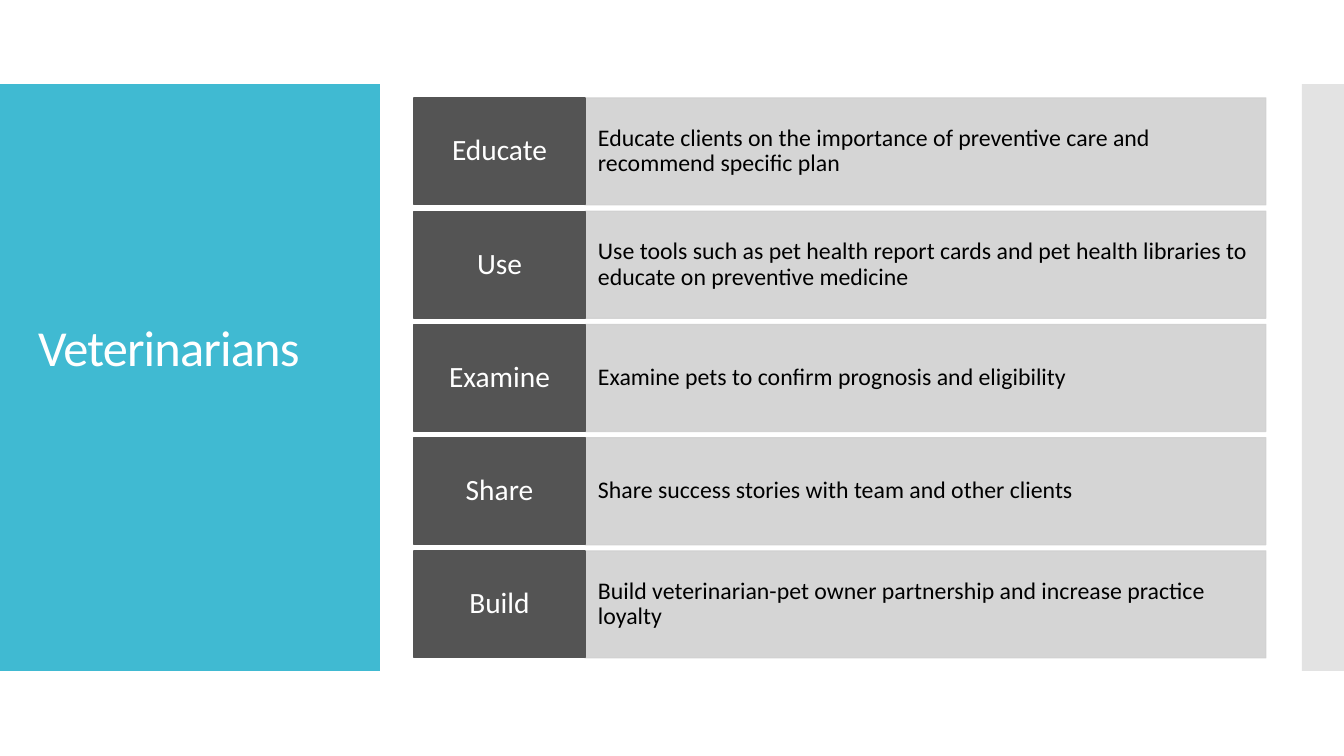
from lxml.etree import SubElement
from pptx import Presentation
from pptx.dml.color import RGBColor
from pptx.enum.shapes import MSO_SHAPE
from pptx.enum.text import MSO_ANCHOR, PP_ALIGN
from pptx.oxml.ns import qn
from pptx.util import Pt

PX = 914400 / 100.8  # EMU in one px

TEAL = RGBColor(0x40, 0xBA, 0xD2)
EDGE_GRAY = RGBColor(0xC8, 0xC8, 0xC8)
LIGHT_GRAY = RGBColor(0xD1, 0xD1, 0xD1)
DARK_GRAY = RGBColor(0x54, 0x54, 0x54)
WHITE = RGBColor(0xFF, 0xFF, 0xFF)
BLACK = RGBColor(0x00, 0x00, 0x00)

ACTIONS = [
    ("Educate", "Educate clients on the importance of preventive care and "
                "recommend specific plan"),
    ("Use", "Use tools such as pet health report cards and pet health "
            "libraries to educate on preventive medicine"),
    ("Examine", "Examine pets to confirm prognosis and eligibility"),
    ("Share", "Share success stories with team and other clients"),
    ("Build", "Build veterinarian-pet owner partnership and increase "
              "practice loyalty"),
]


def px(length):
    return round(length * PX)


def add_block(page, box, color, opacity=100, outlined=False):
    block = page.shapes.add_shape(MSO_SHAPE.RECTANGLE, *map(px, box))
    block.shadow.inherit = False
    paints = [block.fill]
    if outlined:
        block.line.width = Pt(0.85)
        paints.append(block.line.fill)
    else:
        block.line.fill.background()
    for paint in paints:
        paint.solid()
        paint.fore_color.rgb = color
    if opacity < 100:
        for tint in block._element.spPr.iter(qn("a:srgbClr")):
            SubElement(tint, qn("a:alpha"), val=str(opacity * 1000))
    return block


def write(shape, text, size, color, align, insets):
    frame = shape.text_frame
    frame.text = text
    frame.word_wrap = True
    frame.vertical_anchor = MSO_ANCHOR.MIDDLE
    (frame.margin_left, frame.margin_top,
     frame.margin_right, frame.margin_bottom) = map(px, insets)
    para = frame.paragraphs[0]
    para.alignment = align
    para.line_spacing = 0.9
    span = para.runs[0]
    span.font.name = "Calibri"
    span.font.size = Pt(size)
    span.font.color.rgb = color
    return span


def add_title_panel(page, box):
    left, top, width, height = box
    add_block(page, box, TEAL)
    title = page.shapes.add_textbox(
        px(left + 28), px(top + 40), px(width - 55), px(height - 80))
    # The deep bottom inset lifts the title above the middle
    span = write(title, "Veterinarians", 36, WHITE, PP_ALIGN.LEFT,
                 (10, 5, 10, 60))
    span._r.get_or_add_rPr().set("spc", "-60")


def add_action_rows(page, box):
    left, top, width, height = box
    row_height, label_width = 107, 171
    pitch = (height - row_height) / (len(ACTIONS) - 1)
    for index, (verb, detail) in enumerate(ACTIONS):
        row_top = top + index * pitch
        # Description
        band = add_block(
            page, (left + label_width, row_top, width - label_width, row_height),
            LIGHT_GRAY, opacity=90, outlined=True)
        write(band, detail, 17, BLACK, PP_ALIGN.LEFT, (13, 27, 13, 27))
        # Verb label
        label = add_block(page, (left, row_top, label_width, row_height),
                          DARK_GRAY, outlined=True)
        write(label, verb, 21, WHITE, PP_ALIGN.CENTER, (9, 10, 9, 10))


def main():
    deck = Presentation()
    deck.slide_width, deck.slide_height = px(1344), px(756)
    page = deck.slides.add_slide(deck.slide_layouts[6])
    add_title_panel(page, (0, 84, 380, 587))
    add_block(page, (1302, 84, 42, 587), EDGE_GRAY, opacity=50)
    add_action_rows(page, (414, 98, 852, 560))
    deck.save("out.pptx")


if __name__ == "__main__":
    main()
